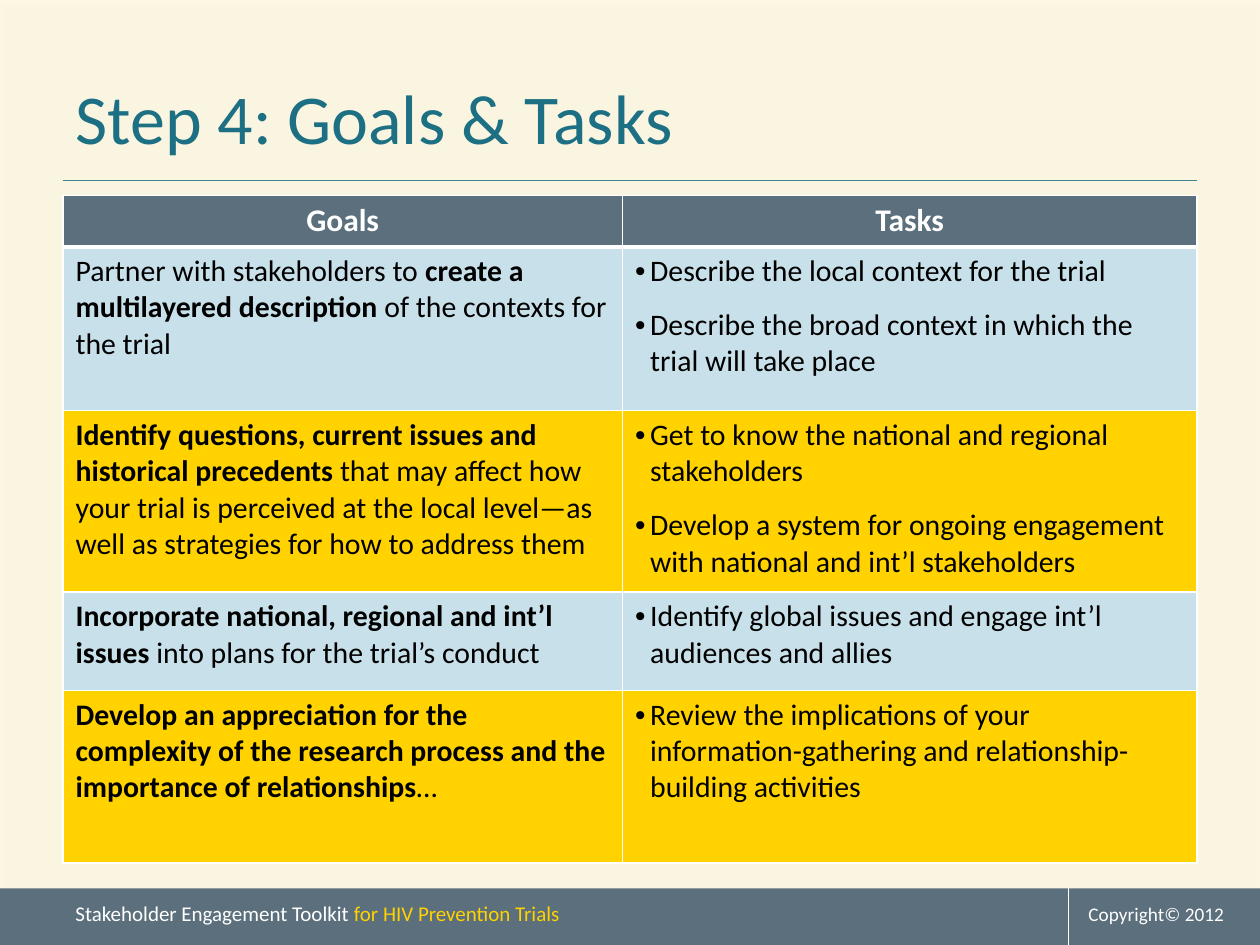
from dataclasses import dataclass

from lxml import etree
from pptx import Presentation
from pptx.dml.color import RGBColor
from pptx.enum.shapes import MSO_CONNECTOR, MSO_SHAPE
from pptx.enum.text import MSO_ANCHOR, PP_ALIGN
from pptx.oxml.ns import qn
from pptx.util import Pt

RECT, LINE = MSO_SHAPE.RECTANGLE, MSO_CONNECTOR.STRAIGHT
LEFT, CENTER, MIDDLE = PP_ALIGN.LEFT, PP_ALIGN.CENTER, MSO_ANCHOR.MIDDLE
PX = 9144  # 100 px to the inch


@dataclass(frozen=True)
class Theme:
    font: str = "Calibri"
    title: str = "006595"
    rule: str = "2C7C9F"
    slate: str = "5C6F7C"
    yellow: str = "FFD200"
    blue: str = "C8E0E9"
    white: str = "FFFFFF"
    black: str = "000000"
    shadow: str = "808080"
    title_pt: int = 40
    header_pt: int = 18
    body_pt: int = 17
    footer_pt: int = 12
    copyright_pt: int = 11


T = Theme()

# Each goal is a list of (text, bold) runs; each task is one bullet.
ROWS = [
    ([("Partner with stakeholders to ", False),
      ("create a multilayered description ", True),
      ("of the contexts for the trial", False)],
     ["Describe the local context for the trial",
      "Describe the broad context in which the trial will take place"]),
    ([("Identify questions, current issues and historical precedents ", True),
      ("that may affect how your trial is perceived at the local level—as well "
       "as strategies for how to address them", False)],
     ["Get to know the national and regional stakeholders",
      "Develop a system for ongoing engagement with national and int’l stakeholders"]),
    ([("Incorporate national, regional and int’l issues ", True),
      ("into plans for the trial’s conduct", False)],
     ["Identify global issues and engage int’l audiences and allies"]),
    ([("Develop an appreciation for the complexity of the research process and "
       "the importance of relationships", True), ("…", False)],
     ["Review the implications of your information-gathering and "
      "relationship-building activities"]),
]


def emu(*lengths):
    return [n * PX for n in lengths]


def sub(parent, tag, **attrs):
    return etree.SubElement(parent, qn(tag), {k: str(v) for k, v in attrs.items()})


def add_run(p, text, size, color, bold=False):
    r = p.add_run()
    r.text = text
    for name, value in {"name": T.font, "size": Pt(size), "bold": bold}.items():
        setattr(r.font, name, value)
    r.font.color.rgb = RGBColor.from_string(color)


def add_rect(s, box, color):
    sp = s.shapes.add_shape(RECT, *emu(*box))
    sp.shadow.inherit = False
    sp.fill.solid()
    sp.fill.fore_color.rgb = RGBColor.from_string(color)
    sp.line.fill.background()
    return sp


def add_line(s, ends, color, width):
    line = s.shapes.add_connector(LINE, *emu(*ends))
    line.line.color.rgb = RGBColor.from_string(color)
    line.line.width = Pt(width)
    sub(line._element.spPr, "a:effectLst")


def add_label(s, box, runs, size):
    tf = s.shapes.add_textbox(*emu(*box)).text_frame
    tf.word_wrap = True
    for text, color in runs:
        add_run(tf.paragraphs[0], text, size, color)


def add_backdrop(s, box):
    """Pale yellow wash with a soft shadow."""
    sp_pr = add_rect(s, box, T.yellow)._element.spPr
    sub(sp_pr.find(".//" + qn("a:srgbClr")), "a:alpha", val=10000)
    shadow = sub(sp_pr.find(qn("a:effectLst")), "a:outerShdw", blurRad=Pt(3.1),
                 dist=Pt(1.8), dir=5400000, rotWithShape=0)
    sub(sub(shadow, "a:srgbClr", val=T.shadow), "a:alpha", val=35000)


def add_footer_bar(s, box):
    x, y, w, h = box
    add_rect(s, box, T.slate)
    add_label(s, (x + 50, y + 5, 792, 30),
              [("Stakeholder Engagement Toolkit ", T.white),
               ("for HIV Prevention Trials", T.yellow)], T.footer_pt)
    add_line(s, (x + 848, y, x + 848, y + h), T.white, 0.75)
    add_label(s, (x + 854, y + 6, 143, 28),
              [("Copyright© 2012", T.white)], T.copyright_pt)


def place_title(s, box, text):
    title = s.shapes.title
    for name, value in zip(("left", "top", "width", "height"), emu(*box)):
        setattr(title, name, value)
    tf = title.text_frame
    tf.vertical_anchor = MIDDLE
    tf.paragraphs[0].alignment = LEFT
    add_run(tf.paragraphs[0], text, T.title_pt, T.title)


def format_cell(cell, color, top=1, bottom=1):
    """Fill a cell and draw its white borders, with widths in points."""
    tc_pr = cell._tc.get_or_add_tcPr()
    for side, width in {"L": 1, "R": 1, "T": top, "B": bottom}.items():
        ln = sub(tc_pr, "a:ln" + side, w=Pt(width))
        sub(sub(ln, "a:solidFill"), "a:srgbClr", val=T.white)
    cell.fill.solid()
    cell.fill.fore_color.rgb = RGBColor.from_string(color)


def add_bullet(p):
    p_pr = p._p.get_or_add_pPr()
    p_pr.set("marL", str(12 * PX))
    p_pr.set("indent", str(-12 * PX))
    sub(p_pr, "a:buFont", typeface="Arial")
    sub(p_pr, "a:buChar", char="•")


def fill_goal(tf, runs):
    p = tf.paragraphs[0]
    p.space_before = Pt(10)
    for text, bold in runs:
        add_run(p, text, T.body_pt, T.black, bold)


def fill_tasks(tf, tasks):
    for i, task in enumerate(tasks):
        p = tf.add_paragraph() if i else tf.paragraphs[0]
        p.space_before = Pt(10)
        add_bullet(p)
        add_run(p, task, T.body_pt, T.black)


def add_goals_table(s, box, widths, heights):
    table = s.shapes.add_table(len(heights), len(widths), *emu(*box)).table
    for col, width in zip(table.columns, emu(*widths)):
        col.width = width
    for row, height in zip(table.rows, emu(*heights)):
        row.height = height
    for c, heading in enumerate(("Goals", "Tasks")):
        cell = table.cell(0, c)
        format_cell(cell, T.slate, bottom=3)
        p = cell.text_frame.paragraphs[0]
        p.alignment = CENTER
        add_run(p, heading, T.header_pt, T.white, True)
    for i, (goal, tasks) in enumerate(ROWS, 1):
        for c in range(2):
            format_cell(table.cell(i, c), T.blue if i % 2 else T.yellow,
                        top=3 if i == 1 else 1)
        fill_goal(table.cell(i, 0).text_frame, goal)
        fill_tasks(table.cell(i, 1).text_frame, tasks)


def main():
    prs = Presentation()
    prs.slide_width, prs.slide_height = emu(1000, 750)
    s = prs.slides.add_slide(prs.slide_layouts[5])
    add_line(s, (50, 143, 950, 143), T.rule, 0.25)
    add_backdrop(s, (0, 0, 1000, 750))
    add_footer_bar(s, (0, 705, 1000, 45))
    place_title(s, (50, 30, 900, 125), "Step 4: Goals & Tasks")
    add_goals_table(s, (50, 155, 900, 530), (444, 456), (41, 130, 144, 78, 137))
    prs.save("out.pptx")


if __name__ == "__main__":
    main()
